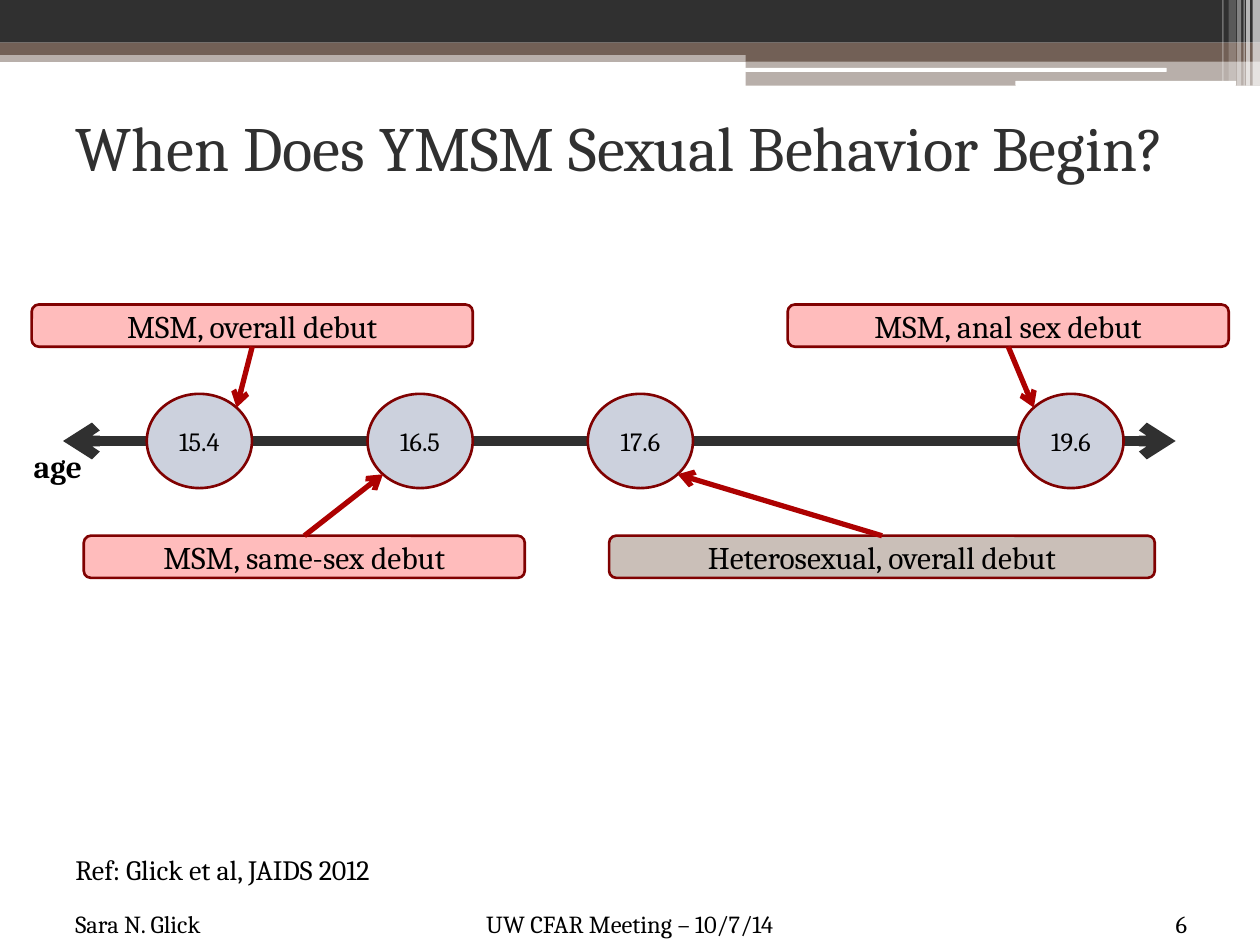
import math

import pptx
import pptx.dml.color
import pptx.enum.shapes
import pptx.enum.text
import pptx.oxml.ns
import pptx.util
from lxml import etree

Cm = pptx.util.Cm
SHAPE = pptx.enum.shapes.MSO_SHAPE
ALIGN = pptx.enum.text.PP_ALIGN
ANCHOR = pptx.enum.text.MSO_ANCHOR

CHARCOAL, BROWN, WHITE, BLACK = "303030", "726056", "FFFFFF", "000000"
PINK, TAUPE, BLUE = "FFBCBC", "CABFB8", "CCD1DD"
DARK_RED, RED = "800101", "AD0101"


def color(hex_text):
    return pptx.dml.color.RGBColor.from_string(hex_text)


def add_xml(parent, tag, **attributes):
    return etree.SubElement(parent, pptx.oxml.ns.qn(tag), attributes)


class TimelineSlide:
    font = "Cambria"

    def __init__(self, presentation):
        self.slide = presentation.slides.add_slide(presentation.slide_layouts[5])

    def set_text(self, shape, text, size, align=ALIGN.LEFT, anchor=ANCHOR.MIDDLE,
                 ink=BLACK, bold=False):
        frame = shape.text_frame
        frame.text = text
        frame.vertical_anchor = anchor
        paragraph = frame.paragraphs[0]
        paragraph.alignment = align
        font = paragraph.runs[0].font
        font.name, font.size, font.bold = self.font, pptx.util.Pt(size), bold
        font.color.rgb = color(ink)

    def title(self, text, left, top, width, height):
        title = self.slide.shapes.title
        title.left, title.top = Cm(left), Cm(top)
        title.width, title.height = Cm(width), Cm(height)
        self.set_text(title, text, 36, ink=CHARCOAL)

    def text(self, text, left, top, width, height, size, wrap=True, **style):
        box = self.slide.shapes.add_textbox(Cm(left), Cm(top), Cm(width), Cm(height))
        box.text_frame.word_wrap = wrap
        self.set_text(box, text, size, **style)

    def shape(self, kind, left, top, width, height, fill, opacity=100):
        shape = self.slide.shapes.add_shape(
            kind, Cm(left), Cm(top), Cm(width), Cm(height))
        shape.shadow.inherit = False
        shape.fill.solid()
        shape.fill.fore_color.rgb = color(fill)
        shape.line.fill.background()
        if opacity < 100:
            tint = shape._element.spPr.find(".//" + pptx.oxml.ns.qn("a:srgbClr"))
            add_xml(tint, "a:alpha", val=str(opacity * 1000))
        return shape

    def label(self, kind, text, left, top, width, height, fill, size):
        label = self.shape(kind, left, top, width, height, fill)
        label.line.color.rgb = color(DARK_RED)
        label.line.width = pptx.util.Pt(1.5)
        self.set_text(label, text, size, ALIGN.CENTER)

    def arrow(self, start, end, ink, weight, both_ends=False):
        arrow = self.slide.shapes.add_connector(
            pptx.enum.shapes.MSO_CONNECTOR.STRAIGHT, *map(Cm, start + end))
        arrow.line.color.rgb = color(ink)
        arrow.line.width = pptx.util.Pt(weight)
        line = arrow._element.spPr.find(pptx.oxml.ns.qn("a:ln"))
        if both_ends:
            add_xml(line, "a:headEnd", type="arrow")
        add_xml(line, "a:tailEnd", type="arrow")
        add_xml(arrow._element.spPr, "a:effectLst")


presentation = pptx.Presentation()
presentation.slide_width, presentation.slide_height = Cm(25.4), Cm(19.05)
page = TimelineSlide(presentation)

# Header bands: left, top, width, height, fill, opacity
for band in [
    (0, 1.02, 25.4, 0.23, BROWN, 50),
    (0, 0, 25.4, 0.86, CHARCOAL),
    (0, 0.86, 25.4, 0.25, BROWN),
    (15.03, 0.99, 10.37, 0.25, BROWN),
    (15.03, 1.23, 10.37, 0.5, BROWN, 50),
]:
    page.shape(SHAPE.RECTANGLE, *band)
for strip in [(15.02, 1.37, 8.5, 0.08), (20.47, 1.63, 4.45, 0.1)]:
    page.shape(SHAPE.ROUNDED_RECTANGLE, *strip, WHITE)

# Header stripes at the right edge: left, width, height, opacity
for left, width, height, opacity in [
    (25.25, 0.15, 1.73, 65), (25.12, 0.08, 1.73, 65), (25.07, 0.02, 1.73, 60),
    (24.94, 0.08, 1.73, 40), (24.77, 0.15, 1.63, 20), (24.64, 0.03, 1.63, 30),
]:
    page.shape(SHAPE.RECTANGLE, left, 0, width, height, WHITE, opacity)

page.title("When Does YMSM Sexual Behavior Begin?", 1.27, 1.47, 23.5, 2.97)

# Age axis
AXIS_Y = 8.89
page.arrow((1.27, AXIS_Y), (23.7, AXIS_Y), CHARCOAL, 6, both_ends=True)
page.text("age", 0.43, AXIS_Y, 1.52, 1.02, 18, wrap=False,
          anchor=ANCHOR.TOP, bold=True)

# Milestones: age, circle centre, label, label left and width, fill,
# label top, and the side (-1 or 1) of the circle that the arrow meets
AGE_WIDTH, AGE_HEIGHT = 2.12, 1.9
LABEL_HEIGHT, ABOVE, BELOW = 0.85, 6.14, 10.8
DIAGONAL = math.sqrt(0.5)
for age, center, name, left, width, fill, top, side in [
    ("15.4", 4.02, "MSM, overall debut", 0.64, 8.89, PINK, ABOVE, 1),
    ("16.5", 8.47, "MSM, same-sex debut", 1.69, 8.89, PINK, BELOW, -1),
    ("17.6", 12.91, "Heterosexual, overall debut", 12.28, 11, TAUPE, BELOW, 1),
    ("19.6", 21.59, "MSM, anal sex debut", 15.88, 8.89, PINK, ABOVE, -1),
]:
    page.label(SHAPE.ROUNDED_RECTANGLE, name, left, top, width, LABEL_HEIGHT, fill, 18)
    page.label(SHAPE.OVAL, age, center - AGE_WIDTH / 2, AXIS_Y - AGE_HEIGHT / 2,
               AGE_WIDTH, AGE_HEIGHT, BLUE, 15)
    edge, direction = (top + LABEL_HEIGHT, -1) if top == ABOVE else (top, 1)
    page.arrow((left + width / 2, edge),
               (center + side * DIAGONAL * AGE_WIDTH / 2,
                AXIS_Y + direction * DIAGONAL * AGE_HEIGHT / 2), RED, 3)

# Reference and footer
page.text("Ref: Glick et al, JAIDS 2012", 1.27, 17.07, 23.29, 0.94, 16,
          anchor=ANCHOR.TOP)
for text, left, width, align in [
    ("Sara N. Glick", 1.27, 4.88, ALIGN.LEFT),
    ("UW CFAR Meeting – 10/7/14", 1.27, 22.86, ALIGN.CENTER),
    ("6", 22.43, 1.75, ALIGN.RIGHT),
]:
    page.text(text, left, 18.03, width, 1.02, 14, align=align, anchor=ANCHOR.BOTTOM)

presentation.save("out.pptx")
